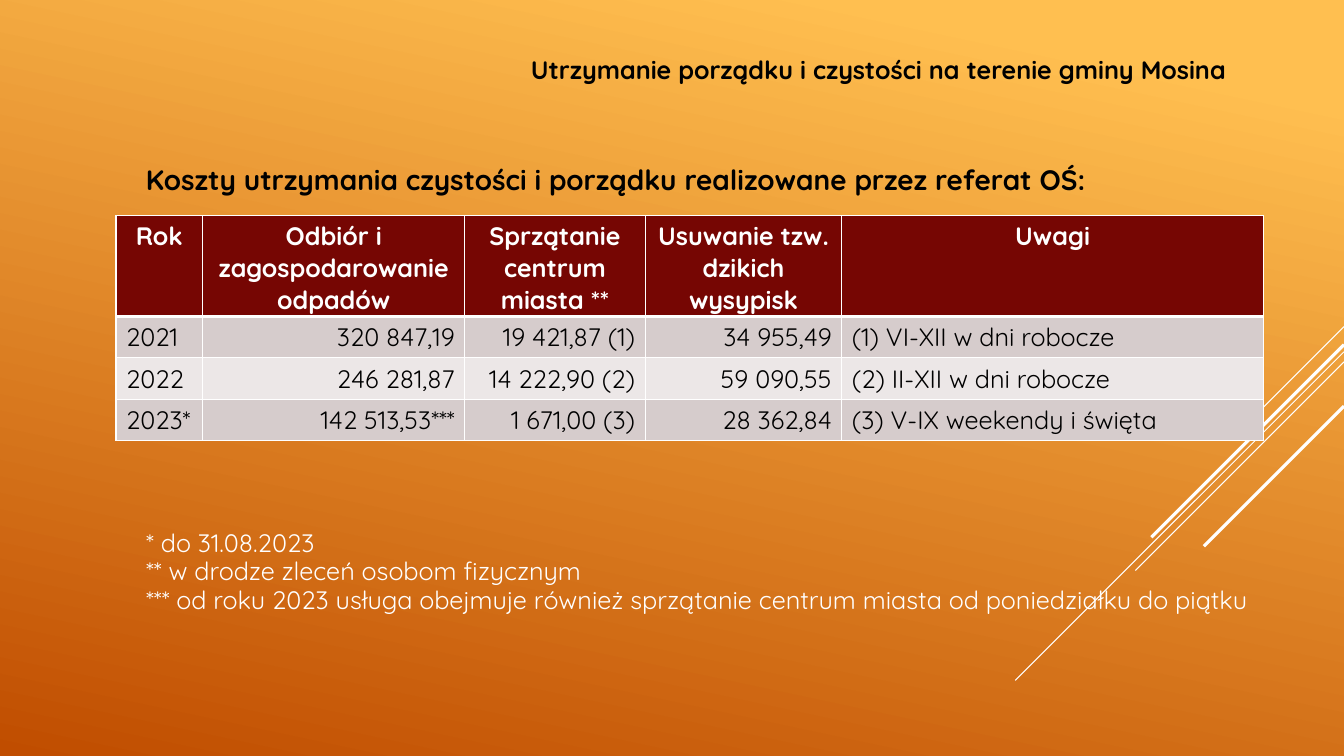
"""Build the slide on the costs of keeping the municipality clean."""
from lxml import etree
from pptx import Presentation
from pptx.dml.color import RGBColor
from pptx.enum import shapes, text
from pptx.oxml import ns
from pptx.util import Inches, Pt

TITLE = "Utrzymanie porządku i czystości na terenie gminy Mosina "
HEADING = "Koszty utrzymania czystości i porządku realizowane przez referat OŚ:"
COSTS = [
    ("Rok", "Odbiór i zagospodarowanie odpadów", "Sprzątanie centrum miasta **",
     "Usuwanie tzw. dzikich wysypisk", "Uwagi"),
    ("2021", "320 847,19", "19 421,87 (1)", "34 955,49", "(1) VI-XII w dni robocze"),
    ("2022", "246 281,87", "14 222,90 (2)", "59 090,55", "(2) II-XII w dni robocze"),
    ("2023*", "142 513,53***", "1 671,00 (3)", "28 362,84", "(3) V-IX weekendy i święta"),
]
FOOTNOTES = [
    "* do 31.08.2023",
    "** w drodze zleceń osobom fizycznym",
    "*** od roku 2023 usługa obejmuje również sprzątanie centrum miasta od poniedziałku do piątku",
]
COLUMN_WIDTHS = [0.86, 2.6, 1.79, 1.95, 4.18]
HEADER_HEIGHT, ROW_HEIGHT = 1.0, 0.41
SLIDE_WIDTH = 13.33
DIAGONALS = [(3.24, 1.0, 0.75), (3.49, 3.26, 0.75), (3.59, 2.07, 0.75),
             (3.42, 1.91, 2.25), (4.03, 1.39, 2.25)]
THEME = {
    "font": "Quicksand", "dark": "000000", "light": "FFFFFF",
    "gradient": [(0.1, "FFBF50"), (1.0, "C04D00")], "angle": 258,
    "header": "760603", "bands": ["D6CCCC", "ECE7E7"],
    "text_size": 18, "heading_size": 20, "border": 1, "header_border": 3,
}
ALIGN = text.PP_ALIGN


def color(name):
    return RGBColor.from_string(THEME.get(name, name))


def write(paragraph, words, tone, bold=False, size="text_size", align=ALIGN.LEFT):
    paragraph.alignment = align
    run = paragraph.add_run()
    run.text = words
    run.font.name = THEME["font"]
    run.font.size = Pt(THEME[size])
    run.font.bold = bold
    run.font.color.rgb = color(tone)


def place(shape, left, top, width, height):
    shape.left, shape.top = Inches(left), Inches(top)
    shape.width, shape.height = Inches(width), Inches(height)


def paint_background(slide):
    fill = slide.background.fill
    fill.gradient()
    fill.gradient_angle = THEME["angle"]
    for stop, (position, tone) in zip(fill.gradient_stops, THEME["gradient"]):
        stop.position = position
        stop.color.rgb = color(tone)


def draw_diagonals(slide):
    for top, reach, weight in DIAGONALS:
        line = slide.shapes.add_connector(
            shapes.MSO_CONNECTOR.STRAIGHT, Inches(SLIDE_WIDTH), Inches(top),
            Inches(SLIDE_WIDTH - reach), Inches(top + reach))
        line.line.color.rgb = color("light")
        line.line.width = Pt(weight)
        etree.SubElement(line._element.spPr, ns.qn("a:effectLst"))


def set_borders(cell, top, bottom):
    properties = cell._tc.get_or_add_tcPr()
    widths = {"lnL": THEME["border"], "lnR": THEME["border"], "lnT": top, "lnB": bottom}
    for index, (side, width) in enumerate(widths.items()):
        border = etree.Element(ns.qn(f"a:{side}"), w=str(Pt(width)))
        fill = etree.SubElement(border, ns.qn("a:solidFill"))
        etree.SubElement(fill, ns.qn("a:srgbClr"), val=THEME["light"])
        properties.insert(index, border)


def add_costs(slide):
    height = HEADER_HEIGHT + ROW_HEIGHT * (len(COSTS) - 1)
    table = slide.shapes.add_table(
        len(COSTS), len(COLUMN_WIDTHS), Inches(1.15), Inches(2.14),
        Inches(sum(COLUMN_WIDTHS)), Inches(height)).table
    for column, width in zip(table.columns, COLUMN_WIDTHS):
        column.width = Inches(width)
    body_aligns = [ALIGN.LEFT, ALIGN.RIGHT, ALIGN.RIGHT, ALIGN.RIGHT, ALIGN.LEFT]
    for row, values in enumerate(COSTS):
        header = row == 0
        table.rows[row].height = Inches(HEADER_HEIGHT if header else ROW_HEIGHT)
        for column, value in enumerate(values):
            cell = table.cell(row, column)
            cell.fill.solid()
            cell.fill.fore_color.rgb = color("header" if header else THEME["bands"][(row - 1) % 2])
            write(cell.text_frame.paragraphs[0], value, "light" if header else "dark",
                  bold=header, align=ALIGN.CENTER if header else body_aligns[column])
            set_borders(cell, THEME["header_border" if row == 1 else "border"],
                        THEME["header_border" if header else "border"])


def add_footnotes(body):
    place(body, 1.35, 5.2, 11.53, 1.0)
    frame = body.text_frame
    for index, note in enumerate(FOOTNOTES):
        paragraph = frame.add_paragraph() if index else frame.paragraphs[0]
        write(paragraph, note, "light", align=ALIGN.JUSTIFY)
        paragraph.space_before = Pt(0)
        paragraph.line_spacing = 0.95
        properties = paragraph._p.get_or_add_pPr()
        properties.set("marL", "0")
        properties.set("indent", "0")
        etree.SubElement(properties, ns.qn("a:buNone"))


def main():
    presentation = Presentation()
    presentation.slide_width, presentation.slide_height = Inches(SLIDE_WIDTH), Inches(7.5)
    slide = presentation.slides.add_slide(presentation.slide_layouts[1])
    paint_background(slide)
    draw_diagonals(slide)
    title, body = slide.placeholders
    place(title, 1.15, 0.49, 11.18, 0.4)
    title.text_frame.vertical_anchor = text.MSO_ANCHOR.MIDDLE
    write(title.text_frame.paragraphs[0], TITLE, "dark", bold=True, align=ALIGN.RIGHT)
    heading = slide.shapes.add_textbox(Inches(1.35), Inches(1.56), Inches(11.53), Inches(0.45))
    heading.text_frame.word_wrap = True
    write(heading.text_frame.paragraphs[0], HEADING, "dark", bold=True, size="heading_size")
    add_footnotes(body)
    add_costs(slide)
    presentation.save("out.pptx")


if __name__ == "__main__":
    main()
